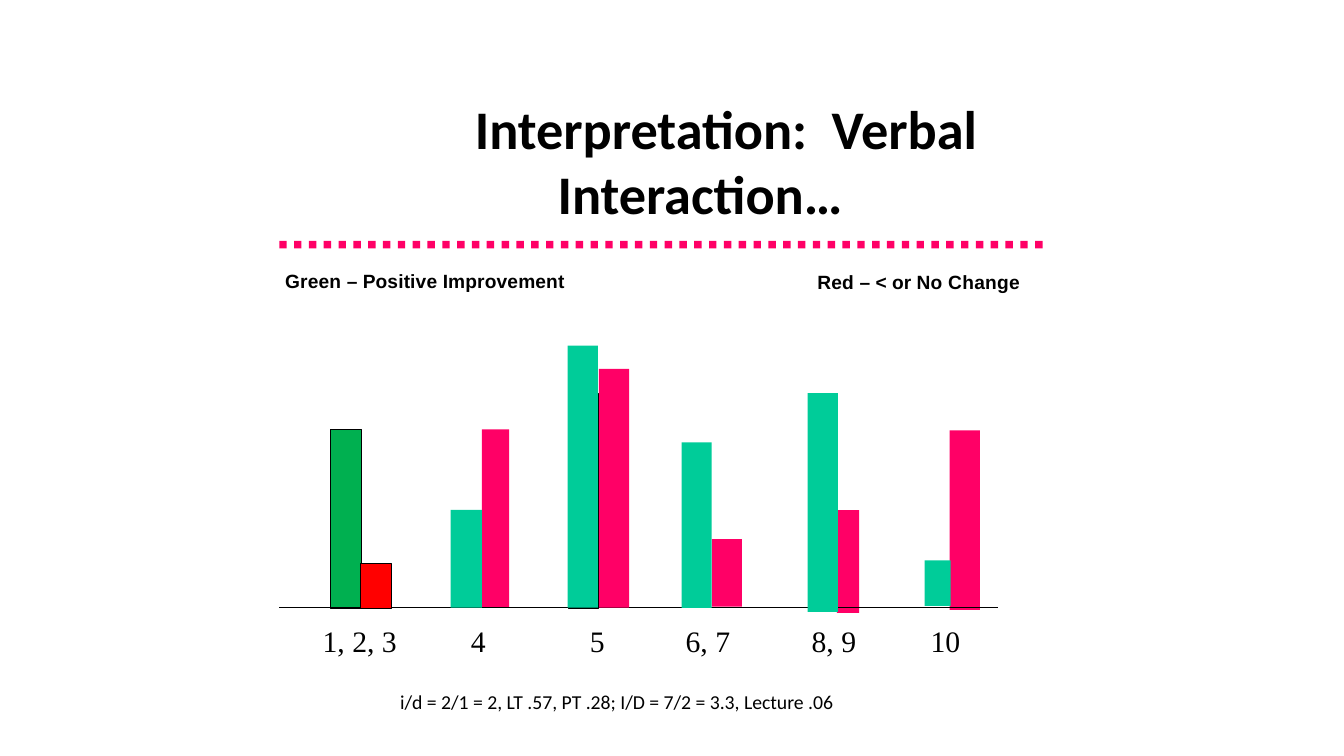
from pptx import Presentation
from pptx.dml.color import RGBColor
from pptx.enum.shapes import MSO_CONNECTOR, MSO_SHAPE
from pptx.enum.text import MSO_ANCHOR, MSO_AUTO_SIZE, PP_ALIGN
from pptx.util import Inches, Pt
from lxml.etree import SubElement
from pptx.oxml.ns import qn

BLACK, PINK, TEAL = "000000", "FF0066", "00CC99"
GREEN, RED = "00B050", "FF0000"


def color(hex_code):
    return RGBColor.from_string(hex_code)


class GridSlide:
    cell = Inches(0.1)
    line_width = Pt(0.75)

    def __init__(self, deck):
        self.slide = deck.slides.add_slide(deck.slide_layouts[5])
        self.shapes = self.slide.shapes

    def place(self, *cells):
        return [round(count * self.cell) for count in cells]

    def run(self, paragraph, words, font, size, bold=False, spacing=0):
        run = paragraph.add_run()
        run.text = words
        run.font.name = font
        run.font.size = Pt(size)
        run.font.bold = bold
        run.font.color.rgb = color(BLACK)
        if spacing:
            run.font._element.set("spc", str(spacing))

    def title(self, words, left, top, width, height, first_line, next_lines):
        heading = self.shapes.title
        heading.left, heading.top, heading.width, heading.height = self.place(
            left, top, width, height)
        frame = heading.text_frame
        frame.auto_size = MSO_AUTO_SIZE.NONE
        frame.word_wrap = True
        frame.vertical_anchor = MSO_ANCHOR.MIDDLE
        frame.margin_left = frame.margin_right = 0
        frame.margin_top = frame.margin_bottom = 0
        paragraph = frame.paragraphs[0]
        paragraph.alignment = PP_ALIGN.LEFT
        paragraph.line_spacing = Pt(46.3)
        margin, indent = self.place(next_lines, first_line - next_lines)
        properties = paragraph._p.get_or_add_pPr()
        properties.set("marL", str(margin))
        properties.set("indent", str(indent))
        self.run(paragraph, words, "Calibri", 38.8, bold=True)

    def text(self, runs, left, top, width, height, font, size, bold=False, inset=True):
        frame = self.shapes.add_textbox(*self.place(left, top, width, height)).text_frame
        frame.word_wrap = False
        frame.auto_size = MSO_AUTO_SIZE.SHAPE_TO_FIT_TEXT
        if not inset:
            frame.margin_left = frame.margin_right = 0
            frame.margin_top = frame.margin_bottom = 0
        for words, spacing in runs:
            self.run(frame.paragraphs[0], words, font, size, bold, spacing)

    def block(self, left, top, right, bottom, fill=None, outline=None):
        block = self.shapes.add_shape(
            MSO_SHAPE.RECTANGLE, *self.place(left, top, right - left, bottom - top))
        block.shadow.inherit = False
        if fill:
            block.fill.solid()
            block.fill.fore_color.rgb = color(fill)
        else:
            block.fill.background()
        if outline:
            block.line.color.rgb = color(outline)
            block.line.width = self.line_width
        else:
            block.line.fill.background()

    def rule(self, left, right, row):
        rule = self.shapes.add_connector(
            MSO_CONNECTOR.STRAIGHT, *self.place(left, row, right, row))
        rule.line.color.rgb = color(BLACK)
        rule.line.width = self.line_width
        SubElement(rule._element.spPr, qn("a:effectLst"))


def main():
    deck = Presentation()
    deck.slide_width, deck.slide_height = Inches(13.33), Inches(7.5)
    page = GridSlide(deck)
    page.title("Interpretation:  Verbal Interaction…", 35.1, 9.5, 63.1, 12.9, 12, 20.2)

    for dot in range(52):
        dot_left = 27.7 + 1.47 * dot
        page.block(dot_left, 23.9, dot_left + 0.74, 24.64, PINK)

    axis_row = 60.3
    bars_behind_axis = [
        (32.8, 42.6, 35.9, 60.4, GREEN, BLACK),
        (47.8, 42.6, 50.5, axis_row, PINK),
        (83, 50.6, 85.2, 60.8, PINK),
        (94.2, 42.7, 97.2, 60.5, PINK),
    ]
    bars_before_axis = [
        (59.4, 36.6, 62.4, axis_row, PINK),
        (56.4, 39, 59.4, 60.4, None, BLACK),
        (35.8, 55.9, 38.8, 60.4, RED, BLACK),
        (44.7, 50.6, 47.8, axis_row, TEAL),
        (56.3, 34.3, 59.3, axis_row, TEAL),
        (70.6, 53.5, 73.6, 60.2, PINK),
        (67.6, 43.9, 70.6, axis_row, TEAL),
        (80.1, 39, 83.1, 60.7, TEAL),
        (91.7, 55.6, 94.3, 60.1, TEAL),
    ]
    for bar in bars_behind_axis:
        page.block(*bar)
    page.rule(27.7, 99, axis_row)
    for bar in bars_before_axis:
        page.block(*bar)

    categories = [("1, 2, 3", 32, 7.6), ("4", 46.7, 1.7), ("5", 58.5, 1.7),
                  ("6, 7", 68, 4.7), ("8, 9", 80.5, 4.7), ("10", 92.3, 3.2)]
    for category, left, width in categories:
        page.text([(category, 0)], left, 61.8, width, 3.6,
                  "Times New Roman", 21.2, inset=False)

    page.text([("Green ", 10), ("– ", 0), ("Positive Improvement", 10)],
              27.3, 26.2, 30.1, 3.3, "Arial", 13.7, bold=True)
    page.text([("Red ", 10), ("– < or ", 0), ("No Change", 20)],
              80.1, 26.3, 22.3, 3.3, "Arial", 13.7, bold=True)
    page.text([("i/d = 2/1 = 2, LT .57, PT .28; I/D = 7/2 = 3.3, Lecture .06", 0)],
              38.7, 67.9, 45.7, 3.4, "Calibri", 14.1)
    deck.save("out.pptx")


if __name__ == "__main__":
    main()
